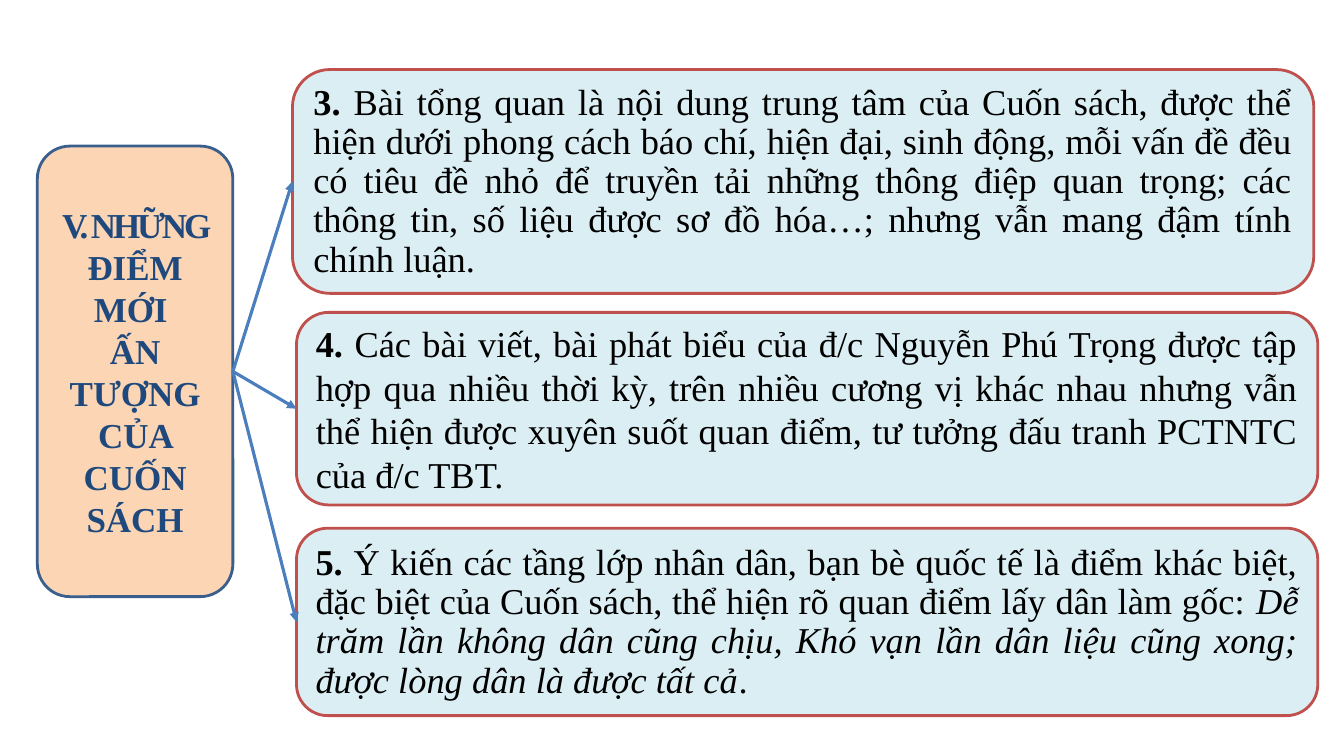
from lxml import etree
from pptx import Presentation
from pptx.dml.color import RGBColor
from pptx.enum.shapes import MSO_CONNECTOR as CONN, MSO_SHAPE as SHAPE
from pptx.enum.text import MSO_ANCHOR as ANCHOR, PP_ALIGN as ALIGN
from pptx.oxml.ns import qn
from pptx.util import Inches, Pt

WIDTH, HEIGHT = Inches(13.33), Inches(7.5)
COL, ROW = WIDTH / 100, HEIGHT / 100

PEACH = RGBColor(0xFC, 0xD5, 0xB5)
NAVY = RGBColor(0x1F, 0x49, 0x7D)
STEEL = RGBColor(0x3A, 0x5F, 0x8C)
ARROW_BLUE = RGBColor(0x4B, 0x7E, 0xBC)
PALE_BLUE = RGBColor(0xDB, 0xEE, 0xF4)
RED = RGBColor(0xC0, 0x50, 0x4D)
BLACK = RGBColor(0, 0, 0)

TITLE_BOX = (2.78, 19.33, 14.55, 59.6)
TITLE = [
    [("V. NHỮNG ", {"bold": True}, -220), ("ĐIỂM MỚI ", {"bold": True}, 0)],
    [("ẤN TƯỢNG CỦA CUỐN SÁCH", {"bold": True}, 0)],
]
POINT_WIDTH = 75.99
POINTS = [
    ((21.76, 9.2, POINT_WIDTH, 29.6), 28, [
        ("3. ", {"bold": True}, 0),
        ("Bài tổng quan là nội dung trung tâm của Cuốn sách, được thể hiện dưới "
         "phong cách báo chí, hiện đại, sinh động, mỗi vấn đề đều có tiêu đề nhỏ "
         "để truyền tải những thông điệp quan trọng; các thông tin, số liệu được "
         "sơ đồ hóa…; nhưng vẫn mang đậm tính chính luận.", {}, 0)]),
    ((22.06, 41.33, POINT_WIDTH, 25.47), 31, [
        ("4. ", {"bold": True}, 0),
        ("Các bài viết, bài phát biểu của đ/c Nguyễn Phú Trọng được tập hợp qua "
         "nhiều thời kỳ, trên nhiều cương vị khác nhau nhưng vẫn thể hiện được "
         "xuyên suốt quan điểm, tư tưởng đấu tranh PCTNTC của đ/c TBT.", {}, 0)]),
    ((22.06, 69.87, POINT_WIDTH, 24.8), 28, [
        ("5. ", {"bold": True}, 0),
        ("Ý kiến các tầng lớp nhân dân, bạn bè quốc tế là điểm khác biệt, đặc biệt "
         "của Cuốn sách, thể hiện rõ quan điểm lấy dân làm gốc: ", {}, 0),
        ("Dễ trăm lần không dân cũng chịu, Khó vạn lần dân liệu cũng xong; được "
         "lòng dân là được tất cả", {"italic": True}, 0),
        (".", {}, 0)]),
]


def add_runs(p, runs, size, color):
    """Add formatted runs to a paragraph."""
    for text, style, spacing in runs:
        r = p.add_run()
        r.text = text
        r.font.color.rgb = color
        formats = {"name": "Times New Roman", "size": Pt(size), "bold": False, **style}
        for name, value in formats.items():
            setattr(r.font, name, value)
        if spacing:
            r._r.get_or_add_rPr().set("spc", str(spacing))


def add_panel(slide, box, fill, line):
    """Add an empty rounded panel at a box given in grid columns and rows."""
    left, top, width, height = box
    sp = slide.shapes.add_shape(
        SHAPE.ROUNDED_RECTANGLE, round(left * COL), round(top * ROW),
        round(width * COL), round(height * ROW))
    sp.shadow.inherit = False
    sp.fill.solid()
    sp.fill.fore_color.rgb = fill
    sp.line.color.rgb = line
    sp.line.width = Pt(2)
    sp.text_frame.word_wrap = True
    sp.text_frame.vertical_anchor = ANCHOR.MIDDLE
    return sp


def add_title(slide, box):
    """Add the section title panel."""
    sp = add_panel(slide, box, PEACH, STEEL)
    tf = sp.text_frame
    for i, runs in enumerate(TITLE):
        p = tf.add_paragraph() if i else tf.paragraphs[0]
        p.alignment = ALIGN.CENTER
        add_runs(p, runs, 25, NAVY)
    return sp


def add_point(slide, box, spacing, runs):
    """Add one numbered point panel."""
    sp = add_panel(slide, box, PALE_BLUE, RED)
    p = sp.text_frame.paragraphs[0]
    p.alignment = ALIGN.JUSTIFY
    p.line_spacing = Pt(spacing)
    add_runs(p, runs, 26, BLACK)
    return sp


def add_arrow(slide, title, point):
    """Join the title's right side to a point's left side with an arrow."""
    cxn = slide.shapes.add_connector(CONN.STRAIGHT, 0, 0, 0, 0)
    cxn.begin_connect(title, 3)
    cxn.end_connect(point, 1)
    cxn.line.color.rgb = ARROW_BLUE
    cxn.line.width = Pt(2.25)
    etree.SubElement(cxn.line._get_or_add_ln(), qn("a:tailEnd"), type="triangle")
    etree.SubElement(cxn._element.spPr, qn("a:effectLst"))


def build_slide(prs):
    """Build the slide with its title, points and arrows."""
    slide = prs.slides.add_slide(prs.slide_layouts[6])
    title = add_title(slide, TITLE_BOX)
    for box, spacing, runs in POINTS:
        add_arrow(slide, title, add_point(slide, box, spacing, runs))


def main():
    """Create and save the presentation."""
    prs = Presentation()
    prs.slide_width, prs.slide_height = WIDTH, HEIGHT
    build_slide(prs)
    prs.save("out.pptx")


if __name__ == "__main__":
    main()
